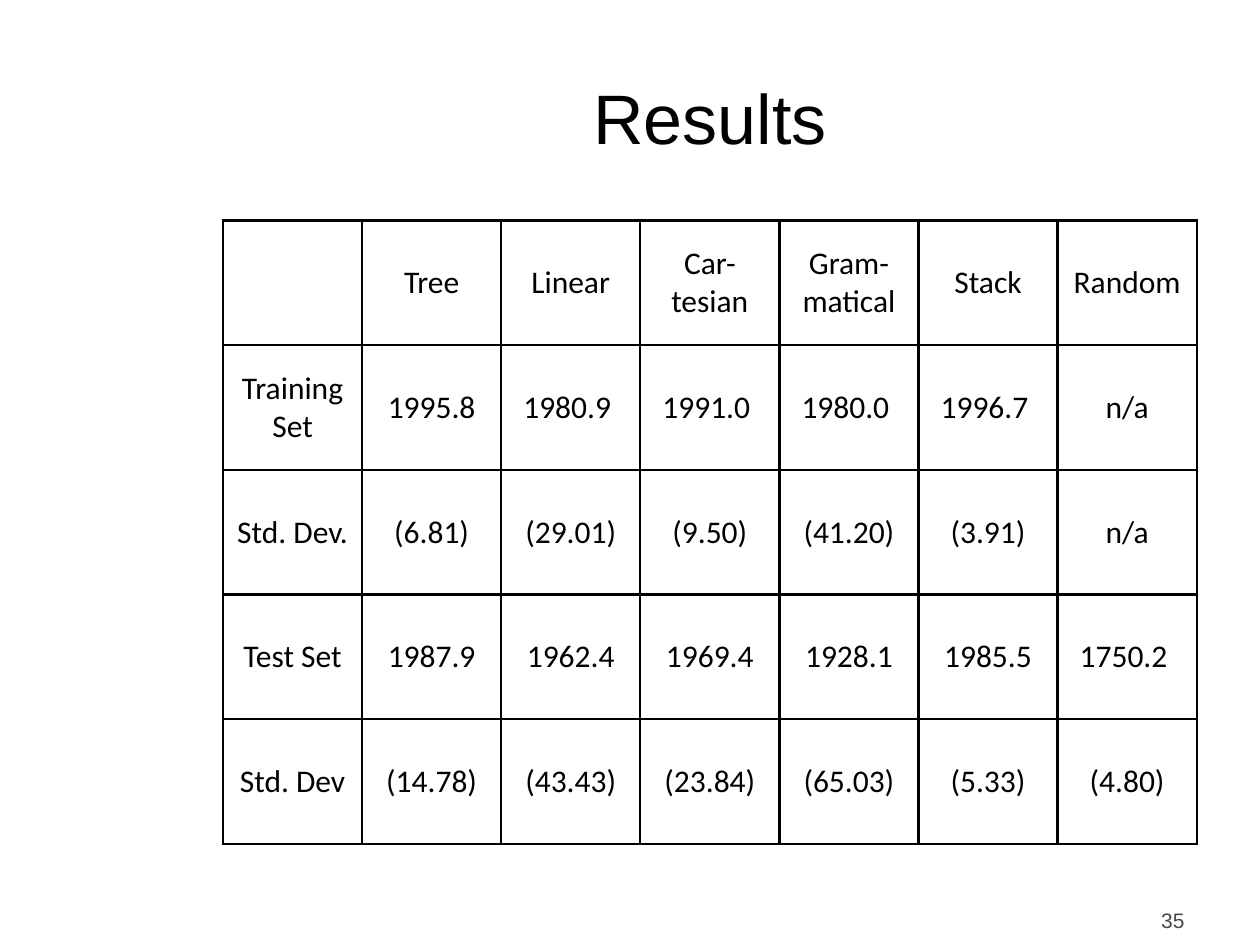
from pptx import Presentation
from pptx.dml.color import RGBColor
from pptx.enum.text import MSO_ANCHOR, PP_ALIGN
from pptx.oxml import parse_xml
from pptx.oxml.ns import nsdecls
from pptx.util import Inches, Pt

BLACK = RGBColor(0x00, 0x00, 0x00)
GRAY = RGBColor(0x46, 0x47, 0x49)
TITLE = "Results"
PAGE = "35"
ROWS = [
    ["", "Tree", "Linear", "Car-tesian", "Gram-matical", "Stack", "Random"],
    ["Training Set", "1995.8", "1980.9 ", "1991.0 ", "1980.0 ", "1996.7 ", "n/a"],
    ["Std. Dev.", "(6.81)", "(29.01)", "(9.50)", "(41.20)", "(3.91)", "n/a"],
    ["Test Set", "1987.9", "1962.4", "1969.4", "1928.1", "1985.5", "1750.2 "],
    ["Std. Dev", "(14.78)", "(43.43)", "(23.84)", "(65.03)", "(5.33)", "(4.80)"],
]
LEFT, RIGHT = Inches(1.77), Inches(9.5)
WIDTH = RIGHT - LEFT
TABLE_TOP, ROW_HEIGHT = Inches(1.75), Inches(0.99)
BORDER = Pt(1.5)


def write(tf, text, font, size, color, align):
    tf.text = text
    tf.word_wrap = True
    p = tf.paragraphs[0]
    p.alignment = align
    for r in p.runs:
        r.font.name = font
        r.font.size = Pt(size)
        r.font.color.rgb = color


def add_borders(cell):
    tc_pr = cell._tc.get_or_add_tcPr()
    for side in ("lnL", "lnR", "lnT", "lnB"):
        tc_pr.append(parse_xml(
            f'<a:{side} {nsdecls("a")} w="{BORDER}"><a:solidFill>'
            f'<a:srgbClr val="{BLACK}"/></a:solidFill></a:{side}>'))


def add_results(s):
    n_rows, n_cols = len(ROWS), len(ROWS[0])
    table = s.shapes.add_table(n_rows, n_cols, LEFT, TABLE_TOP,
                               WIDTH, ROW_HEIGHT * n_rows).table
    table.first_row = table.horz_banding = False
    for col in table.columns:
        col.width = WIDTH // n_cols
    for i, values in enumerate(ROWS):
        table.rows[i].height = ROW_HEIGHT
        for j, value in enumerate(values):
            cell = table.cell(i, j)
            add_borders(cell)
            cell.fill.background()
            cell.vertical_anchor = MSO_ANCHOR.MIDDLE
            write(cell.text_frame, value, "Calibri", 18, BLACK, PP_ALIGN.CENTER)


def main():
    prs = Presentation()
    prs.slide_width, prs.slide_height = Inches(10), Inches(7.5)
    s = prs.slides.add_slide(prs.slide_layouts[5])

    title = s.shapes.title
    title.left, title.top = LEFT, Inches(0.3)
    title.width, title.height = WIDTH, Inches(1.25)
    title.text_frame.vertical_anchor = MSO_ANCHOR.MIDDLE
    write(title.text_frame, TITLE, "Arial", 40, BLACK, PP_ALIGN.CENTER)

    page_width = Inches(2.83)
    page = s.shapes.add_textbox(RIGHT - page_width, Inches(7.1), page_width, Inches(0.4))
    page.text_frame.vertical_anchor = MSO_ANCHOR.MIDDLE
    write(page.text_frame, PAGE, "Arial", 12, GRAY, PP_ALIGN.RIGHT)

    add_results(s)
    prs.save("out.pptx")


if __name__ == "__main__":
    main()
